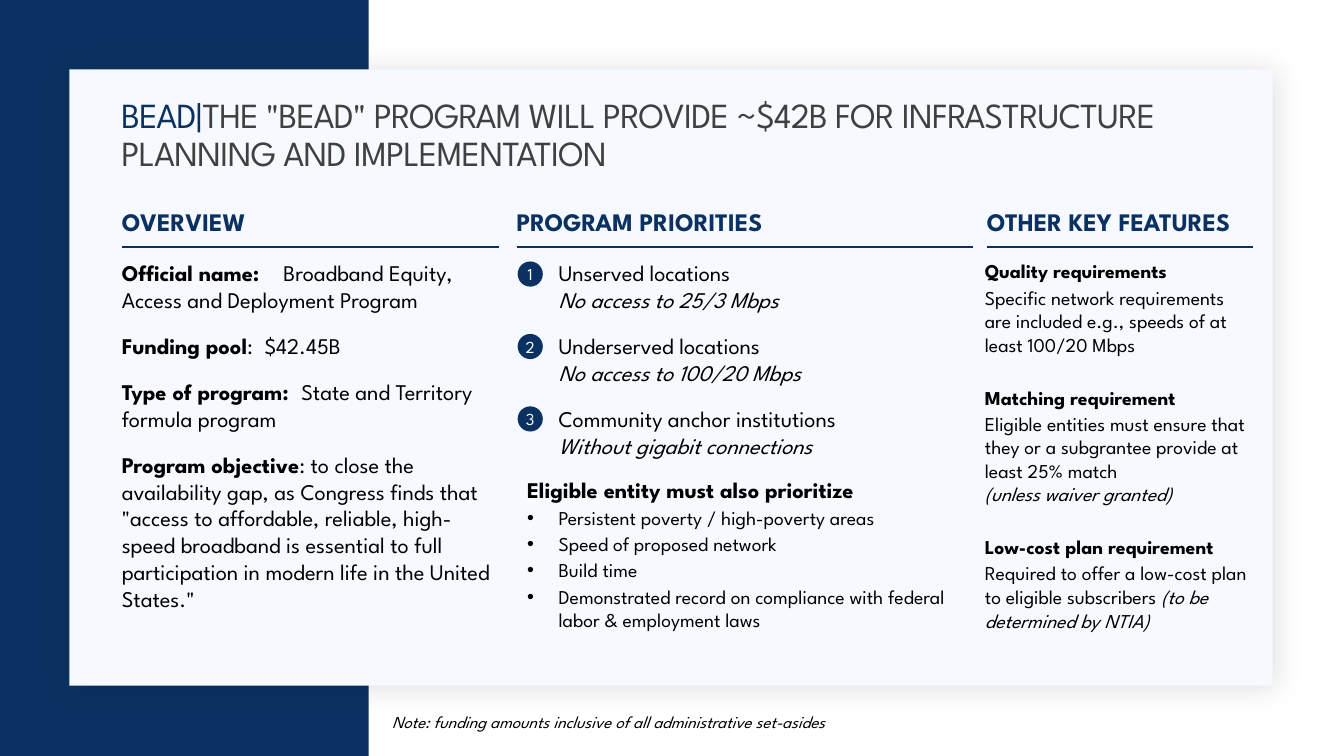
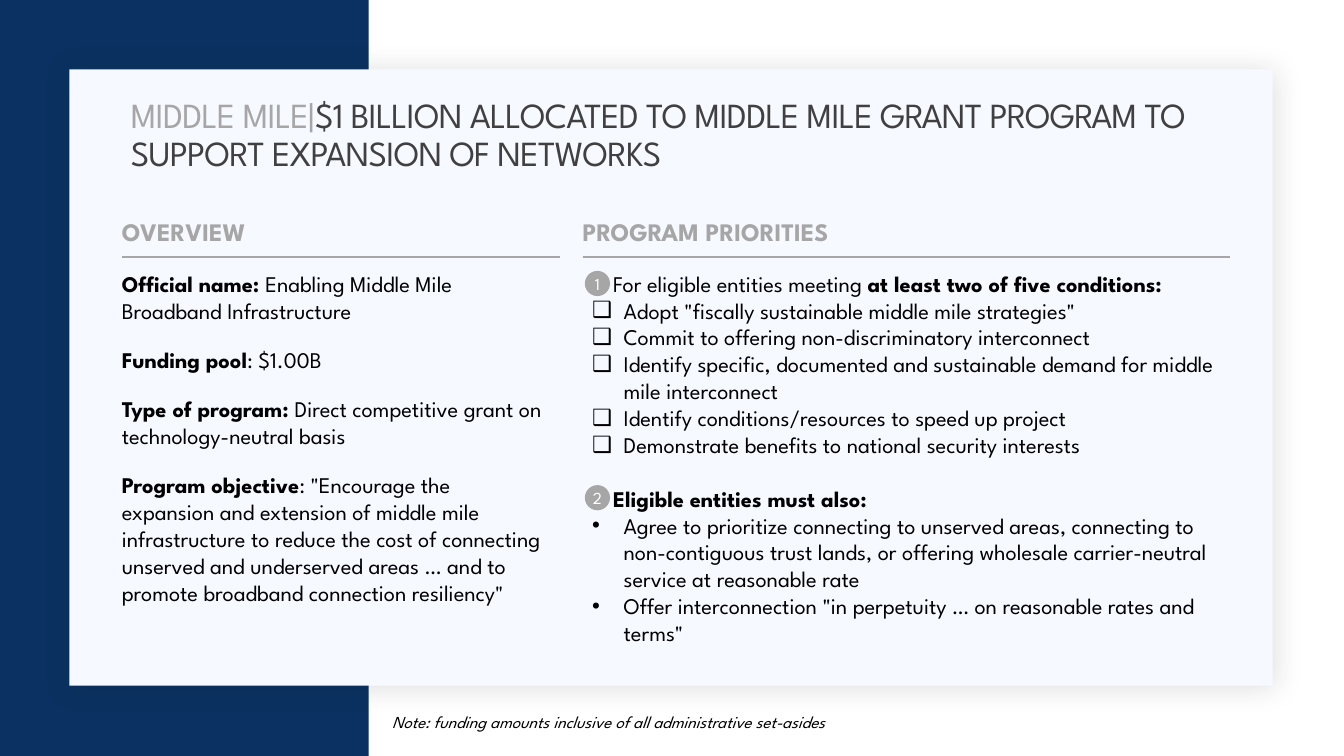
from dataclasses import dataclass
from lxml.etree import SubElement
from pptx import Presentation
from pptx.dml.color import RGBColor
from pptx.enum.shapes import MSO_CONNECTOR, MSO_SHAPE
from pptx.enum.text import MSO_ANCHOR, MSO_AUTO_SIZE, PP_ALIGN
from pptx.oxml.ns import qn
from pptx.util import Emu, Pt

NAVY, GRAY, DARK = "0A3161", "A6A6A6", "404040"
CARD, BLACK, WHITE = "F6F9FF", "000000", "FFFFFF"
FONT = "League Spartan"
NOTE = "Note: funding amounts inclusive of all administrative set-asides"


def px(n):
    return Emu(n * 9525)


def rgb(value):
    return RGBColor.from_string(value)


def bold(text):
    return text, {"bold": True}


def italic(text):
    return text, {"italic": True}


@dataclass
class Para:
    runs: list
    gap: float = 2
    size: float = 0
    left: int = 0
    bullet: str = ""
    tab: int = 0


def bullets(texts, char, **kw):
    return [Para([t], left=30, bullet=char, **kw) for t in texts]


class Deck:
    def __init__(self):
        self.prs = Presentation()
        self.prs.slide_width, self.prs.slide_height = px(1280), px(720)
        self.layout = self.prs.slide_layouts[5]
        self.s = None
        self.accent = NAVY

    def new_slide(self, accent):
        first = self.s is None
        self.s = self.prs.slides.add_slide(self.layout)
        self.accent = accent
        if first:
            self.background()

    def background(self):
        band = self.shape(MSO_SHAPE.RECTANGLE, 0, 0, 351, 720, NAVY)
        card = self.shape(MSO_SHAPE.RECTANGLE, 66, 66, 1146, 587, CARD)
        effects = card._element.spPr.find(qn("a:effectLst"))
        shadow = SubElement(effects, qn("a:outerShdw"), blurRad=str(Pt(20)),
                            dist=str(Pt(2)), dir=str(45 * 60000),
                            algn="ctr", rotWithShape="0")
        color = SubElement(shadow, qn("a:srgbClr"), val="1F2125")
        SubElement(color, qn("a:alpha"), val="15000")
        for n, sp in enumerate((band, card)):
            sp._element.nvSpPr.cNvPr.set("id", str(100 + n))
            self.layout.shapes._spTree.insert(2 + n, sp._element)

    def shape(self, kind, x, y, w, h, fill):
        sp = self.s.shapes.add_shape(kind, px(x), px(y), px(w), px(h))
        sp.shadow.inherit = False
        sp.fill.solid()
        sp.fill.fore_color.rgb = rgb(fill)
        sp.line.fill.background()
        return sp

    def run(self, p, text, size, color, **formats):
        r = p.add_run()
        r.text = text
        for key, value in {"name": FONT, "size": Pt(size), "bold": False,
                           "italic": False, **formats}.items():
            setattr(r.font, key, value)
        r.font.color.rgb = rgb(color)
        return r

    def frame(self, sp, margin=None, **formats):
        tf = sp.text_frame
        if margin is not None:
            formats.update({f"margin_{side}": margin
                            for side in ("left", "top", "right", "bottom")})
        for key, value in {"word_wrap": True, **formats}.items():
            setattr(tf, key, value)
        return tf

    def title(self, x, w, lead, text):
        sp = self.s.shapes.title
        for key, value in {"left": x, "top": 99, "width": w, "height": 61}.items():
            setattr(sp, key, px(value))
        tf = self.frame(sp, auto_size=MSO_AUTO_SIZE.NONE,
                        vertical_anchor=MSO_ANCHOR.MIDDLE)
        p = tf.paragraphs[0]
        p.alignment = PP_ALIGN.LEFT
        p.line_spacing = 0.9
        for part, color in ((lead, self.accent), (text, DARK)):
            r = self.run(p, part, 25.2, color)
            r.font._element.set("spc", "-50")

    def text(self, x, y, w, h, paras, size=16, color=BLACK, margin=0):
        sp = self.s.shapes.add_textbox(px(x), px(y), px(w), px(h))
        tf = self.frame(sp, margin, auto_size=MSO_AUTO_SIZE.SHAPE_TO_FIT_TEXT)
        for n, para in enumerate(paras):
            p = tf.add_paragraph() if n else tf.paragraphs[0]
            p.space_before = Pt(para.gap if n else 0)
            self.indent(p, para)
            for part in para.runs:
                words, formats = (part, {}) if isinstance(part, str) else part
                self.run(p, words, para.size or size, color, **formats)

    def indent(self, p, para):
        pPr = p._p.get_or_add_pPr()
        if para.left:
            pPr.set("marL", str(px(para.left)))
        if para.bullet:
            pPr.set("indent", str(px(-para.left)))
            SubElement(pPr, qn("a:buFont"), typeface="Arial")
            SubElement(pPr, qn("a:buChar"), char=para.bullet)
        if para.tab:
            tabs = SubElement(pPr, qn("a:tabLst"))
            SubElement(tabs, qn("a:tab"), pos=str(px(para.tab)), algn="l")

    def heading(self, x, right, y, text):
        self.text(x, y, right - x + 3, 29, [Para([bold(text)])], 18, self.accent)
        line = self.s.shapes.add_connector(MSO_CONNECTOR.STRAIGHT, px(x),
                                           px(y + 39), px(right), px(y + 39))
        line.line.color.rgb = rgb(self.accent)
        line.line.width = Pt(1.5)
        SubElement(line._element.spPr, qn("a:effectLst"))

    def badges(self, x, tops):
        for n, y in enumerate(tops, 1):
            sp = self.shape(MSO_SHAPE.OVAL, x, y, 24, 24, self.accent)
            tf = self.frame(sp, 0, vertical_anchor=MSO_ANCHOR.MIDDLE)
            p = tf.paragraphs[0]
            p.alignment = PP_ALIGN.CENTER
            self.run(p, str(n), 12, WHITE)

    def note(self):
        self.text(364, 673, 776, 29, [Para([italic(NOTE)])], 12, margin=None)


def bead(deck):
    deck.new_slide(NAVY)
    deck.title(106, 1066, "BEAD|", 'THE "BEAD" PROGRAM WILL PROVIDE ~$42B FOR '
               "INFRASTRUCTURE PLANNING AND IMPLEMENTATION")
    for x, right, text in ((116, 475, "OVERVIEW"),
                           (492, 927, "PROGRAM PRIORITIES"),
                           (940, 1193, "OTHER KEY FEATURES")):
        deck.heading(x, right, 196, text)
    deck.text(116, 247, 362, 340, [
        Para([bold("Official name:"),
              "\tBroadband Equity, Access and Deployment Program"], tab=154),
        Para([bold("Funding pool"), ":\t$42.45B"], 13.6, tab=136),
        Para([bold("Type of program:"),
              "\tState and Territory formula program"], 13.6, tab=171),
        Para([bold("Program objective"),
              ": to close the availability gap, as Congress finds that "
              '"access to affordable, reliable, high-speed broadband is essential '
              'to full participation in modern life in the United States."'], 13.6),
    ])
    priorities = []
    for place, access in (
            ("Unserved locations", "No access to 25/3 Mbps"),
            ("Underserved locations", "No access to 100/20 Mbps"),
            ("Community anchor institutions", "Without gigabit connections")):
        priorities += [Para([place], 13.6, left=30),
                       Para([italic(access)], 0, left=30)]
    priorities.append(Para([bold("Eligible entity must also prioritize")], 12.4))
    priorities += bullets((
        "Persistent poverty / high-poverty areas",
        "Speed of proposed network",
        "Build time",
        "Demonstrated record on compliance with federal labor & employment laws",
    ), "•", size=14)
    deck.text(502, 247, 438, 358, priorities)
    deck.badges(493, range(249, 388, 69))
    deck.text(938, 247, 254, 360, [
        Para([bold("Quality requirements")]),
        Para(["Specific network requirements are included e.g., "
              "speeds of at least 100/20 Mbps"]),
        Para([bold("Matching requirement")], 20.8),
        Para(["Eligible entities must ensure that they or a subgrantee "
              "provide at least 25% match"]),
        Para([italic("(unless waiver granted)")], 0),
        Para([bold("Low-cost plan requirement")], 20.8),
        Para(["Required to offer a low-cost plan to eligible subscribers ",
              italic("(to be determined by NTIA)")]),
    ], 14)
    deck.note()


def middle_mile(deck):
    deck.new_slide(GRAY)
    deck.title(115, 1056, "MIDDLE MILE|", "$1 BILLION ALLOCATED TO MIDDLE MILE "
               "GRANT PROGRAM TO SUPPORT EXPANSION OF NETWORKS")
    deck.heading(116, 533, 206, "OVERVIEW")
    deck.heading(555, 1171, 206, "PROGRAM PRIORITIES")
    deck.text(116, 257, 405, 330, [
        Para([bold("Official name: "),
              "Enabling Middle Mile Broadband Infrastructure"]),
        Para([bold("Funding pool"), ": $1.00B"], 16),
        Para([bold("Type of program: "),
              "Direct competitive grant on technology-neutral basis"], 16),
        Para([bold("Program objective"),
              ': "Encourage the expansion and extension of middle mile '
              "infrastructure to reduce the cost of connecting unserved and "
              "underserved areas … and to promote broadband connection "
              'resiliency"'], 16),
    ])
    conditions = bullets((
        'Adopt "fiscally sustainable middle mile strategies"',
        "Commit to offering non-discriminatory interconnect",
        "Identify specific, documented and sustainable demand for middle mile "
        "interconnect",
        "Identify conditions/resources to speed up project",
        "Demonstrate benefits to national security interests",
    ), "❑", gap=0)
    duties = bullets((
        "Agree to prioritize connecting to unserved areas, connecting to "
        "non-contiguous trust lands, or offering wholesale carrier-neutral "
        "service at reasonable rate",
        'Offer interconnection "in perpetuity … on reasonable rates and terms"',
    ), "•", gap=0)
    deck.text(564, 257, 616, 362, [
        Para(["For eligible entities meeting ",
              bold("at least two of five conditions:")], left=20),
        *conditions,
        Para([bold("Eligible entities must also:")], 19.2, left=20),
        *duties,
    ])
    deck.badges(557, (258, 462))
    deck.note()


def main():
    deck = Deck()
    bead(deck)
    middle_mile(deck)
    deck.prs.save("out.pptx")


if __name__ == "__main__":
    main()
